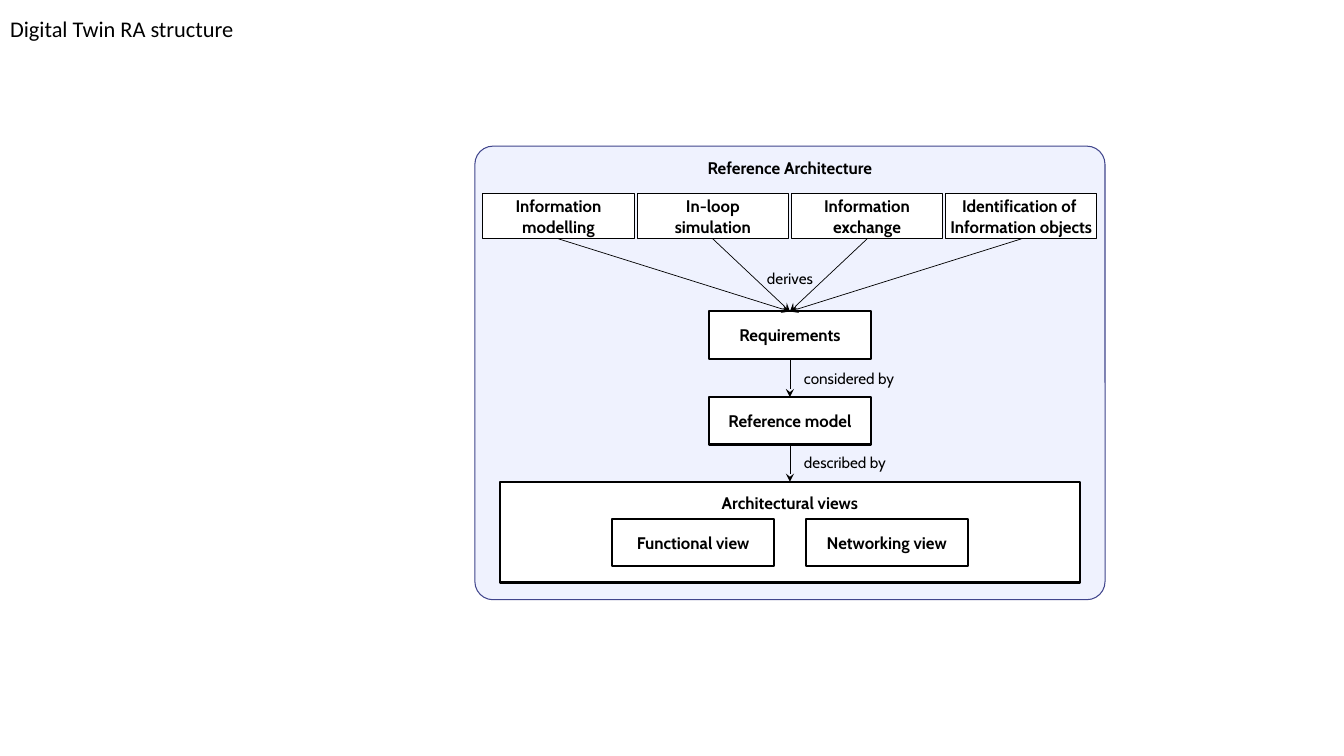
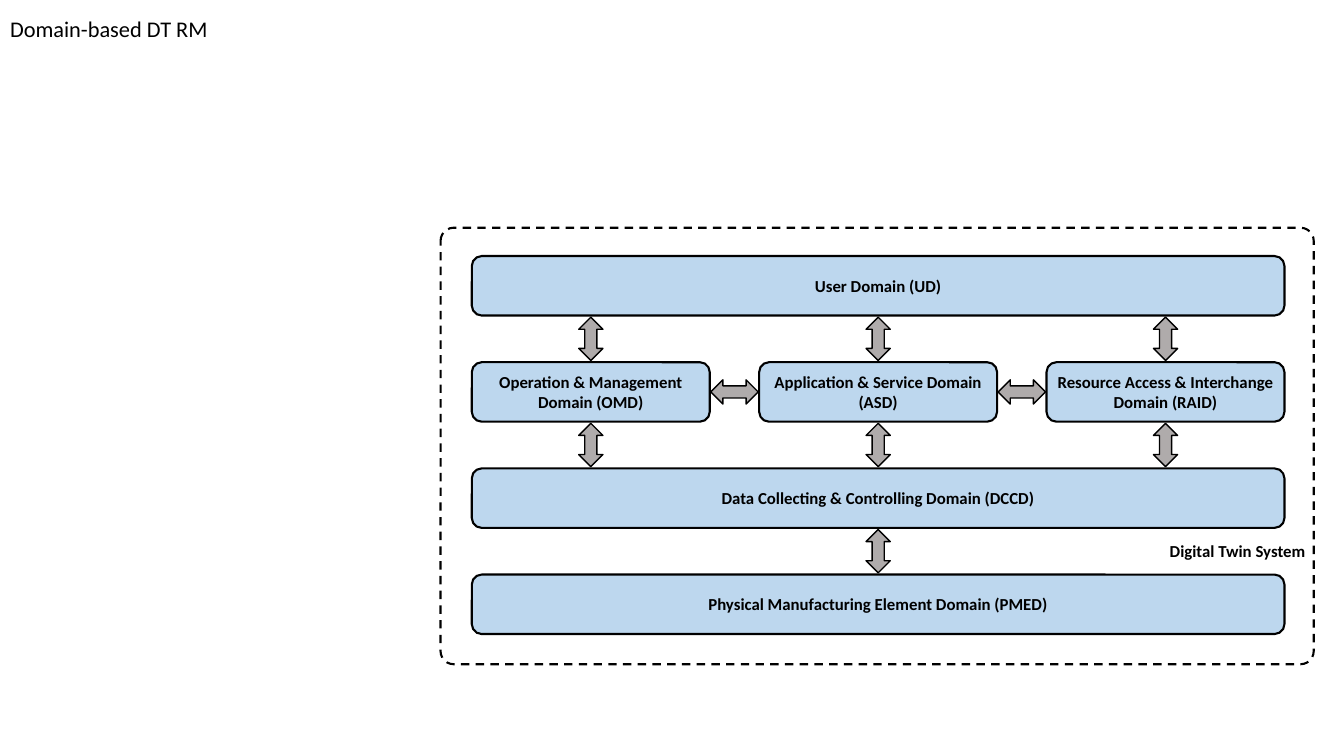
from collections import namedtuple

from lxml import etree
from pptx import Presentation
from pptx import util as u
from pptx.dml.color import RGBColor
from pptx.enum import dml, shapes, text
from pptx.oxml.ns import qn

COLORS = {
    "ink": "000000",
    "white": "FFFFFF",
    "panel": "C6D1FE",
    "panel_edge": "40458C",
    "domain": "BDD7EE",
    "arrow": "AFABAB",
}
HEADING_FONT = "Calibri"
STRUCTURE_FONT = "Cabin"
CENTER = text.PP_ALIGN.CENTER
LEFT = text.PP_ALIGN.LEFT
SHAPE = shapes.MSO_SHAPE

Box = namedtuple("Box", "left top width height")


def color(name):
    return RGBColor.from_string(COLORS[name])


def inches(box):
    return [u.Inches(value) for value in box]


def write(frame, lines, font, size=12, bold=True, align=CENTER):
    for index, line in enumerate(lines):
        paragraph = frame.add_paragraph() if index else frame.paragraphs[0]
        paragraph.alignment = align
        run = paragraph.add_run()
        run.text = line
        run.font.name = font
        run.font.size = u.Pt(size)
        run.font.bold = bold
        run.font.color.rgb = color("ink")


def add_box(slide, kind, box, fill, line="ink", weight=1.5, lines=(), font=HEADING_FONT, wrap=True):
    shape = slide.shapes.add_shape(kind, *inches(box))
    shape.shadow.inherit = False
    if fill:
        shape.fill.solid()
        shape.fill.fore_color.rgb = color(fill)
    else:
        shape.fill.background()
    shape.line.color.rgb = color(line)
    shape.line.width = u.Pt(weight)
    frame = shape.text_frame
    frame.word_wrap = wrap
    frame.vertical_anchor = text.MSO_ANCHOR.MIDDLE
    write(frame, lines, font)
    return shape


def add_label(slide, box, label, font, wrap=True, **style):
    frame = slide.shapes.add_textbox(*inches(box)).text_frame
    frame.word_wrap = wrap
    frame.auto_size = text.MSO_AUTO_SIZE.SHAPE_TO_FIT_TEXT
    write(frame, [label], font, **style)


def add_arrow(slide, source, target):
    connector = slide.shapes.add_connector(shapes.MSO_CONNECTOR.STRAIGHT, 0, 0, 0, 0)
    connector.begin_connect(source, 2)
    connector.end_connect(target, 0)
    connector.line.color.rgb = color("ink")
    connector.line.width = u.Pt(0.5)
    line = connector.line._get_or_add_ln()
    etree.SubElement(line, qn("a:tailEnd"), type="stealth")
    etree.SubElement(connector._element.spPr, qn("a:effectLst"))


def add_titled_slide(presentation, title, width):
    slide = presentation.slides.add_slide(presentation.slide_layouts[5])
    placeholder = slide.shapes.title
    placeholder.left, placeholder.top, placeholder.width, placeholder.height = inches((0, 0, width, 0.61))
    frame = placeholder.text_frame
    frame.auto_size = text.MSO_AUTO_SIZE.NONE
    frame.vertical_anchor = text.MSO_ANCHOR.MIDDLE
    write(frame, [title], HEADING_FONT, size=16, bold=False, align=LEFT)
    frame.paragraphs[0].line_spacing = 0.9
    return slide


def row_lefts(center, count, width, gap):
    start = center - (count * width + (count - 1) * gap) / 2
    return [start + index * (width + gap) for index in range(count)]


def draw_structure(slide, box):
    center = box.left + box.width / 2
    step_width, step_height = 1.61, 0.47

    panel = add_box(slide, SHAPE.ROUNDED_RECTANGLE, box, "panel", "panel_edge", 0.75)
    panel.adjustments[0] = 0.04
    tint = panel._element.spPr.find(qn("a:solidFill"))[0]
    etree.SubElement(tint, qn("a:alpha"), val="28000")
    add_label(slide, (center - 1.35, box.top + 0.07, 2.7, 0.3), "Reference Architecture", STRUCTURE_FONT)

    def add_step(left, top, label):
        return add_box(slide, SHAPE.RECTANGLE, (left, box.top + top, step_width, step_height),
                       "white", lines=[label], font=STRUCTURE_FONT)

    requirements = add_step(center - step_width / 2, 1.64, "Requirements")
    model = add_step(center - step_width / 2, 2.49, "Reference model")
    views = add_box(slide, SHAPE.RECTANGLE, (center - 2.875, box.top + 3.33, 5.75, 1), "white",
                    lines=["Architectural views"], font=STRUCTURE_FONT)
    views.text_frame.vertical_anchor = text.MSO_ANCHOR.TOP
    views.text_frame.margin_top = u.Inches(0.11)
    view_names = ["Functional view", "Networking view"]
    for left, name in zip(row_lefts(center, 2, step_width, 0.31), view_names):
        add_step(left, 3.7, name)

    topics = [
        ["Information", "modelling"],
        ["In-loop", "simulation"],
        ["Information", "exchange"],
        ["Identification of ", "Information objects"],
    ]
    for left, lines in zip(row_lefts(center, 4, 1.5, 0.03), topics):
        topic = add_box(slide, SHAPE.RECTANGLE, (left, box.top + 0.47, 1.5, 0.45), "white",
                        weight=0.75, lines=lines, font=STRUCTURE_FONT, wrap=False)
        add_arrow(slide, topic, requirements)
    add_arrow(slide, requirements, model)
    add_arrow(slide, model, views)

    relations = [
        ("derives", -0.43, 1.17, 0.86, CENTER),
        ("considered by", 0.04, 2.16, 1.25, LEFT),
        ("described by", 0.04, 3, 1.25, LEFT),
    ]
    for label, offset, top, width, align in relations:
        add_label(slide, (center + offset, box.top + top, width, 0.28), label,
                  STRUCTURE_FONT, size=10.9, bold=False, align=align)


def draw_domains(slide, box):
    left, width, height = box.left + 0.31, 8.06, 0.59
    first_top, last_top = box.top + 0.28, box.top + 3.44
    pitch = (last_top - first_top) / 3
    tops = [first_top + row * pitch for row in range(4)]
    column_width = 2.36
    column_gap = (width - 3 * column_width) / 2
    center = left + width / 2
    columns = row_lefts(center, 3, column_width, column_gap)
    arrow_length, arrow_breadth = 0.43, 0.24

    frame = add_box(slide, SHAPE.ROUNDED_RECTANGLE, box, None)
    frame.adjustments[0] = 0.03
    frame.line.dash_style = dml.MSO_LINE.DASH

    def add_domain(domain_left, top, domain_width, label):
        domain = add_box(slide, SHAPE.ROUNDED_RECTANGLE, (domain_left, top, domain_width, height),
                         "domain", lines=[label])
        domain.text_frame.margin_left = domain.text_frame.margin_right = 0

    def add_link(kind, middle_x, middle_y, link_width, link_height):
        add_box(slide, kind, (middle_x - link_width / 2, middle_y - link_height / 2, link_width, link_height),
                "arrow", weight=1)

    wide_domains = {
        0: "User Domain (UD)",
        2: "Data Collecting & Controlling Domain (DCCD)",
        3: "Physical Manufacturing Element Domain (PMED)",
    }
    for row, label in wide_domains.items():
        add_domain(left, tops[row], width, label)
    middle_domains = [
        "Operation & Management Domain (OMD)",
        "Application & Service Domain (ASD)",
        "Resource Access & Interchange Domain (RAID)",
    ]
    for column, label in zip(columns, middle_domains):
        add_domain(column, tops[1], column_width, label)

    column_centers = [column + column_width / 2 for column in columns]
    for row, link_centers in enumerate([column_centers, column_centers, [center]]):
        middle_y = (tops[row] + height + tops[row + 1]) / 2
        for middle_x in link_centers:
            add_link(SHAPE.UP_DOWN_ARROW, middle_x, middle_y, arrow_breadth, arrow_length)
    for column in columns[1:]:
        add_link(SHAPE.LEFT_RIGHT_ARROW, column - column_gap / 2, tops[1] + height / 2, 0.47, arrow_breadth)

    add_label(slide, (box.left + 7.12, box.top + 3.06, 1.57, 0.3), "Digital Twin System",
              HEADING_FONT, wrap=False)


def main():
    presentation = Presentation()
    presentation.slide_width = u.Inches(13.33)
    presentation.slide_height = u.Inches(7.5)
    draw_structure(add_titled_slide(presentation, "Digital Twin RA structure", 4.04), Box(4.71, 1.45, 6.25, 4.5))
    draw_domains(add_titled_slide(presentation, "Domain-based DT RM", 4.4), Box(4.37, 2.26, 8.66, 4.33))
    presentation.save("out.pptx")


if __name__ == "__main__":
    main()
